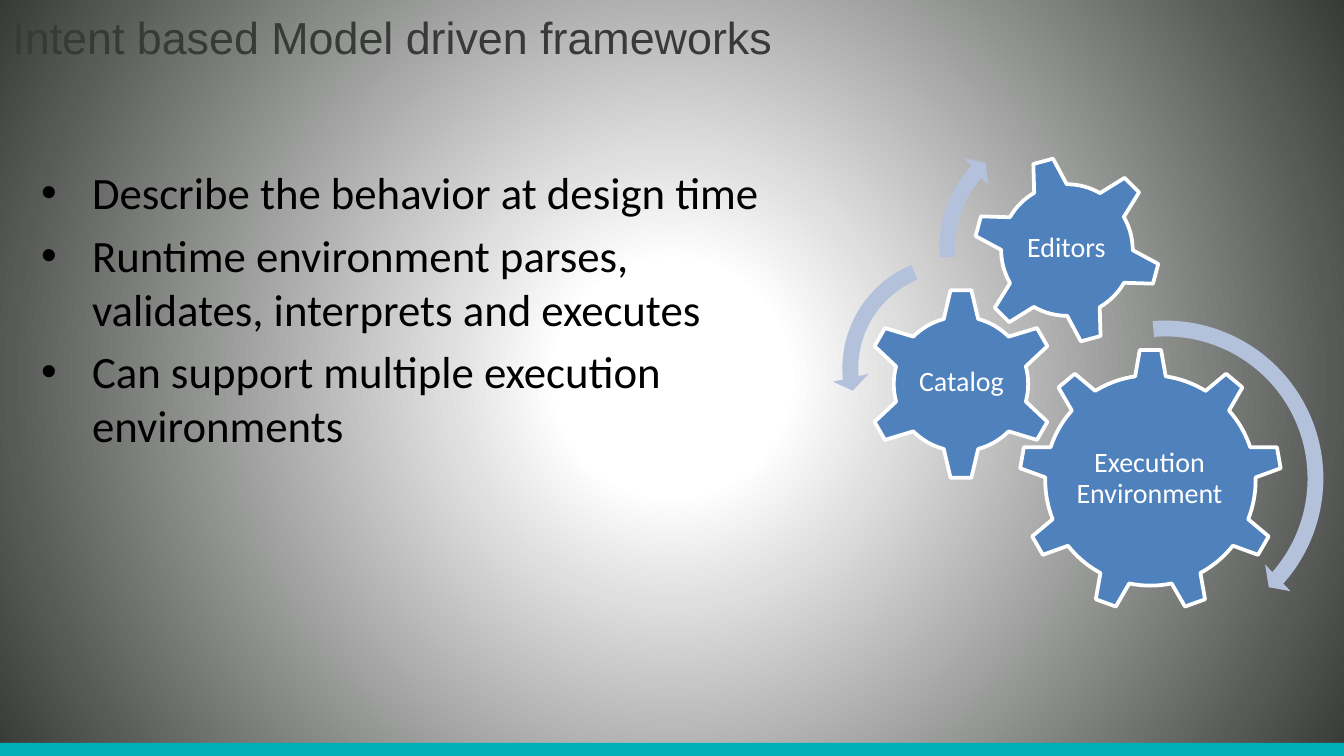
"""Build the slide on intent based, model driven frameworks."""
from typing import NamedTuple

from lxml import etree
from pptx import Presentation
from pptx.dml.color import RGBColor
from pptx.enum.shapes import MSO_SHAPE
from pptx.enum.text import MSO_ANCHOR, PP_ALIGN
from pptx.oxml import parse_xml
from pptx.oxml.ns import nsdecls, qn
from pptx.util import Emu, Pt

RECT = MSO_SHAPE.RECTANGLE
GEAR_6, GEAR_9 = MSO_SHAPE.GEAR_6, MSO_SHAPE.GEAR_9
ARROW, LEFT_ARROW = MSO_SHAPE.CIRCULAR_ARROW, MSO_SHAPE.LEFT_CIRCULAR_ARROW
LEFT, CENTER = PP_ALIGN.LEFT, PP_ALIGN.CENTER
TOP, MIDDLE = MSO_ANCHOR.TOP, MSO_ANCHOR.MIDDLE

EMU_PER_PX = 914400 / 134.4
WIDTH, HEIGHT, BAR_HEIGHT = 1344, 756, 13
WHITE, BLACK, CHARCOAL = "FFFFFF", "000000", "373A36"
TEAL, BLUE, PALE_BLUE = "00B0B9", "4F81BD", "B3C1DB"
BULLET_INDENT = 51


class Box(NamedTuple):
    left: int
    top: int
    width: int
    height: int


class Gear(NamedTuple):
    kind: MSO_SHAPE
    box: Box
    label: str
    label_box: Box
    rotation: int = 0


class Arrow(NamedTuple):
    kind: MSO_SHAPE
    box: Box
    adjustments: tuple[float, ...]


GEARS = (
    Gear(GEAR_9, Box(1019, 349, 263, 263), "Execution Environment", Box(1071, 411, 157, 136)),
    Gear(GEAR_6, Box(865, 288, 192, 192), "Catalog", Box(914, 336, 95, 94)),
    Gear(GEAR_6, Box(973, 156, 188, 188), "Editors", Box(1014, 196, 105, 105), 345),
)
ARROWS = (
    Arrow(ARROW, Box(997, 310, 337, 337), (0.047, 2.99, 24.888, 159.216, 0.055)),
    Arrow(LEFT_ARROW, Box(832, 246, 245, 245), (0.065, 4.3, 104.891, 148.378, 0.075)),
    Arrow(ARROW, Box(929, 116, 263, 263), (0.06, 3.941, 133.138, 105.082, 0.07)),
)
POINTS = (
    "Describe the behavior at design time",
    "Runtime environment parses, validates, interprets and executes",
    "Can support multiple execution environments",
)


def px(value: float) -> Emu:
    """Turn pixels into EMU."""
    return Emu(round(value * EMU_PER_PX))


def rgb(value: str) -> RGBColor:
    """Turn a hex string into a colour."""
    return RGBColor.from_string(value)


def set_all(target, **values) -> None:
    """Set each named attribute on the target."""
    for name, value in values.items():
        setattr(target, name, value)


def format_font(font, name: str, size: int, color: str) -> None:
    """Set the typeface, size and colour of a font."""
    set_all(font, name=name, size=Pt(size))
    font.color.rgb = rgb(color)


def add_background(s) -> None:
    """Fill the slide with a circular gradient."""
    fill = s.background.fill
    fill.gradient()
    for stop, (position, color) in zip(fill.gradient_stops, ((0.15, WHITE), (1, CHARCOAL))):
        stop.position = position
        stop.color.rgb = rgb(color)
    lin = s.element.xpath("./p:cSld/p:bg//a:lin")[0]
    circle = parse_xml(
        f'<a:path {nsdecls("a")} path="circle">'
        '<a:fillToRect l="50000" t="50000" r="50000" b="50000"/></a:path>'
    )
    lin.getparent().replace(lin, circle)


def add_shape(s, kind: MSO_SHAPE, box: Box, fill: str, line: str | None = None):
    """Add a flat preset shape."""
    sp = s.shapes.add_shape(kind, *map(px, box))
    sp.shadow.inherit = False
    sp.fill.solid()
    sp.fill.fore_color.rgb = rgb(fill)
    if line:
        sp.line.color.rgb = rgb(line)
        sp.line.width = Pt(2)
    else:
        sp.line.fill.background()
    return sp


def add_text_frame(s, box: Box, inset_x: int, inset_y: int, anchor: MSO_ANCHOR):
    """Add a wrapping text box and return its frame."""
    tf = s.shapes.add_textbox(*map(px, box)).text_frame
    set_all(tf, word_wrap=True, vertical_anchor=anchor,
            margin_left=px(inset_x), margin_right=px(inset_x),
            margin_top=px(inset_y), margin_bottom=px(inset_y))
    return tf


def add_title(s, text: str) -> None:
    """Place and format the title."""
    sp = s.shapes.title
    set_all(sp, left=px(-1), top=px(0), width=px(1210), height=px(73))
    tf = sp.text_frame
    set_all(tf, text=text, vertical_anchor=MIDDLE)
    p = tf.paragraphs[0]
    p.alignment = LEFT
    format_font(p.runs[0].font, "Arial", 24, CHARCOAL)


def add_gear(s, gear: Gear) -> None:
    """Add a gear and its upright label."""
    sp = add_shape(s, gear.kind, gear.box, BLUE, WHITE)
    sp.rotation = gear.rotation
    tf = add_text_frame(s, gear.label_box, 3, 3, MIDDLE)
    p = tf.paragraphs[0]
    set_all(p, text=gear.label, alignment=CENTER, line_spacing=0.9)
    format_font(p.runs[0].font, "Calibri", 15, WHITE)


def add_arrow(s, arrow: Arrow) -> None:
    """Add a curved arrow."""
    sp = add_shape(s, arrow.kind, arrow.box, PALE_BLUE)
    for i, value in enumerate(arrow.adjustments):
        sp.adjustments[i] = value


def add_bullets(s, box: Box, points: tuple[str, ...]) -> None:
    """Add the bulleted list."""
    tf = add_text_frame(s, box, 9, 5, TOP)
    for i, point in enumerate(points):
        p = tf.add_paragraph() if i else tf.paragraphs[0]
        set_all(p, text=point, space_before=Pt(4.8) if i else Pt(0))
        pPr = p._p.get_or_add_pPr()
        pPr.set("marL", str(px(BULLET_INDENT)))
        pPr.set("indent", str(px(-BULLET_INDENT)))
        etree.SubElement(pPr, qn("a:buFont")).set("typeface", "Arial")
        etree.SubElement(pPr, qn("a:buChar")).set("char", "•")
        format_font(p.runs[0].font, "Calibri", 24, BLACK)


def main() -> None:
    """Build and save the presentation."""
    prs = Presentation()
    set_all(prs, slide_width=px(WIDTH), slide_height=px(HEIGHT))
    s = prs.slides.add_slide(prs.slide_layouts[5])
    add_background(s)
    add_shape(s, RECT, Box(0, HEIGHT - BAR_HEIGHT, WIDTH, BAR_HEIGHT), TEAL)
    add_title(s, "Intent based Model driven frameworks")
    for gear in GEARS:
        add_gear(s, gear)
    for arrow in ARROWS:
        add_arrow(s, arrow)
    add_bullets(s, Box(32, 160, 742, 499), POINTS)
    prs.save("out.pptx")


if __name__ == "__main__":
    main()
